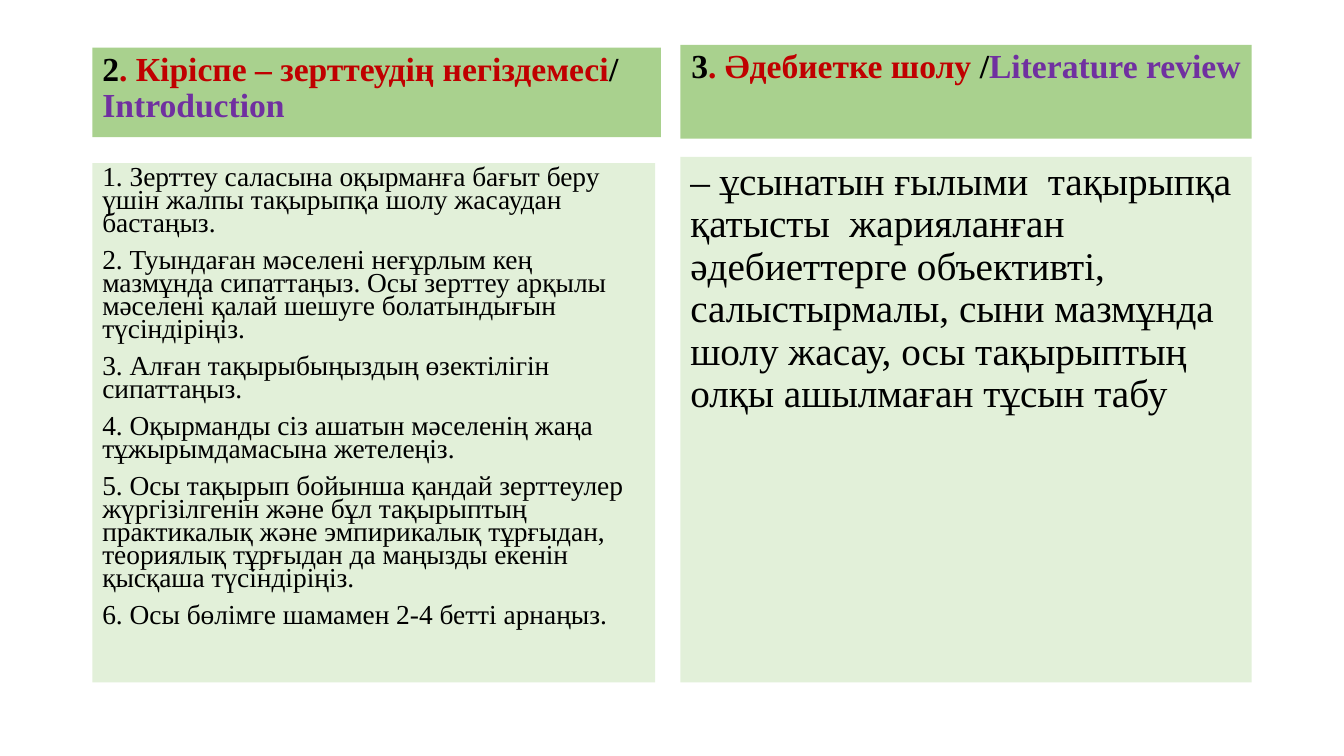
"""Build a slide with two headed columns on writing a research paper."""
import dataclasses
import pptx
import pptx.dml.color
import pptx.enum.shapes
import pptx.enum.text
import pptx.util

Pt = pptx.util.Pt
Rgb = pptx.dml.color.RGBColor.from_string
Align = pptx.enum.text.PP_ALIGN


@dataclasses.dataclass(frozen=True)
class Theme:
    """Hold the colours, font and type sizes of the slide."""
    font: str = "Times New Roman"
    head: str = "A9D18E"
    body: str = "E2F0D9"
    ink: str = "000000"
    red: str = "C00000"
    violet: str = "7030A0"
    title: float = 24
    steps: float = 19.6
    text: float = 28
    gap: float = 10


THEME = Theme()

STEPS = (
    "1. Зерттеу саласына оқырманға бағыт беру үшін жалпы тақырыпқа шолу жасаудан бастаңыз.",
    "2. Туындаған мәселені неғұрлым кең мазмұнда сипаттаңыз. Осы зерттеу арқылы мәселені қалай шешуге болатындығын түсіндіріңіз.",
    "3. Алған тақырыбыңыздың өзектілігін сипаттаңыз.",
    "4. Оқырманды сіз ашатын мәселенің жаңа тұжырымдамасына жетелеңіз.",
    "5. Осы тақырып бойынша қандай зерттеулер жүргізілгенін және бұл тақырыптың практикалық және эмпирикалық тұрғыдан, теориялық тұрғыдан да маңызды екенін қысқаша түсіндіріңіз.",
    "6. Осы бөлімге шамамен 2-4 бетті арнаңыз.",
)
REVIEW = (
    "– ұсынатын ғылыми  тақырыпқа қатысты  жарияланған әдебиеттерге объективті, салыстырмалы, сыни мазмұнда шолу жасау, осы тақырыптың олқы ашылмаған тұсын табу",
)


def add_panel(slide, box, fill):
    """Add a plain filled rectangle and return its text frame."""
    kind = pptx.enum.shapes.MSO_SHAPE.RECTANGLE
    panel = slide.shapes.add_shape(kind, *map(Pt, box))
    panel.shadow.inherit = False
    panel.fill.solid()
    panel.fill.fore_color.rgb = Rgb(fill)
    panel.line.fill.background()
    frame = panel.text_frame
    frame.word_wrap = True
    frame.vertical_anchor = pptx.enum.text.MSO_ANCHOR.TOP
    return frame


def style(para, size, lead, align=Align.LEFT, bold=False):
    """Set the font and spacing of a paragraph."""
    para.alignment = align
    para.line_spacing = lead
    para.space_before = Pt(THEME.gap)
    para.font.name = THEME.font
    para.font.size = Pt(size)
    para.font.bold = bold
    para.font.color.rgb = Rgb(THEME.ink)


def add_head(slide, box, parts, align=Align.LEFT):
    """Add a heading panel whose parts alternate in colour."""
    para = add_panel(slide, box, THEME.head).paragraphs[0]
    style(para, THEME.title, 0.9, align, True)
    tints = (THEME.ink, THEME.red, THEME.ink, THEME.violet)
    for part, tint in zip(parts, tints):
        run = para.add_run()
        run.text = part
        run.font.color.rgb = Rgb(tint)


def add_body(slide, box, lines, size, lead):
    """Add a body panel with one paragraph for each line."""
    frame = add_panel(slide, box, THEME.body)
    frame.text = "\n".join(lines)
    for para in frame.paragraphs:
        style(para, size, lead)


def main():
    """Build and save the slide."""
    deck = pptx.Presentation()
    deck.slide_width, deck.slide_height = Pt(960), Pt(540)
    slide = deck.slides.add_slide(deck.slide_layouts[6])
    left, right, wide = 66, 486, 408
    add_head(slide, (left, 34, 406, 64),
             ("2", ". Кіріспе – зерттеудің негіздемесі", "/ ", "Introduction"))
    add_body(slide, (left, 116.5, 402, 371), STEPS, THEME.steps, 0.7)
    add_head(slide, (right, 32, wide, 67),
             ("3", ". Әдебиетке шолу ", "/", "Literature review"), Align.CENTER)
    add_body(slide, (right, 112, wide, 375.5), REVIEW, THEME.text, 0.9)
    deck.save("out.pptx")


if __name__ == "__main__":
    main()
